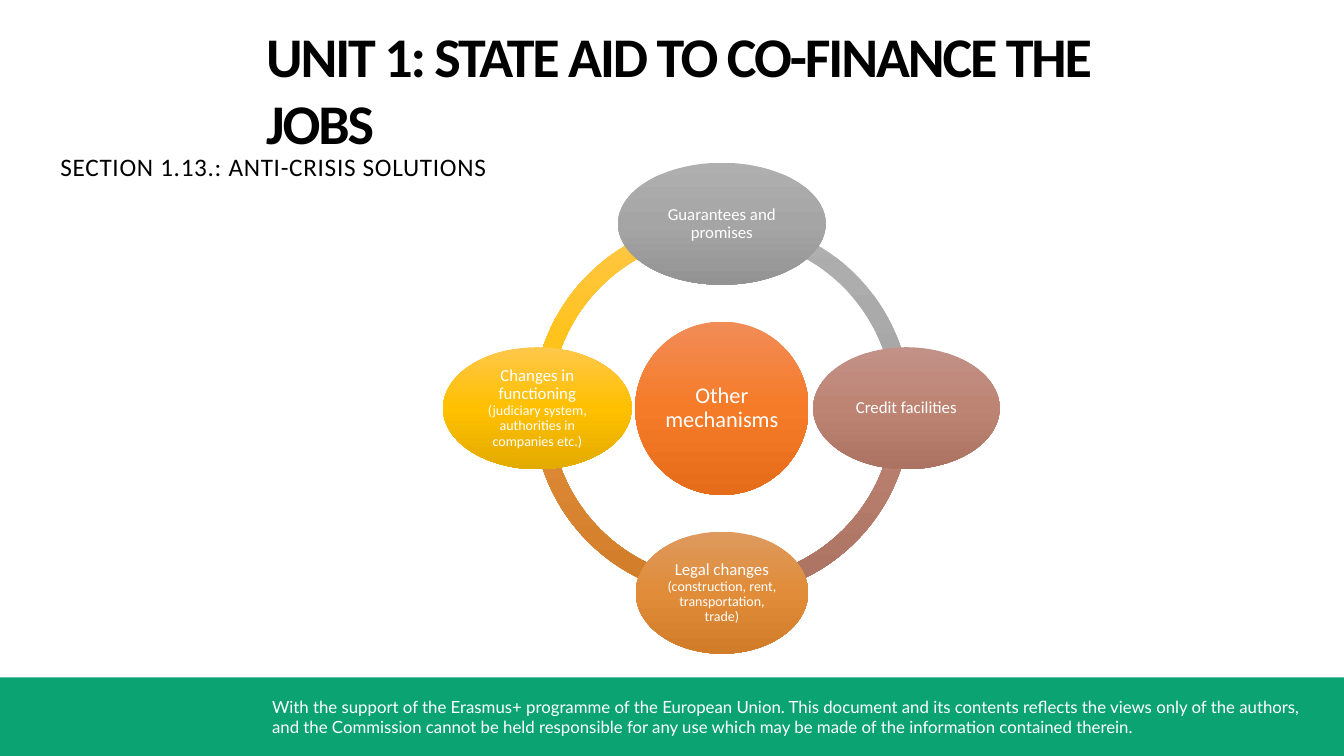
from copy import deepcopy

from pptx import Presentation
from pptx.dml.color import RGBColor
from pptx.enum.shapes import MSO_SHAPE
from pptx.enum.text import MSO_ANCHOR, PP_ALIGN
from pptx.oxml.ns import qn
from pptx.util import Inches, Pt

RECTANGLE, OVAL, ARC = MSO_SHAPE.RECTANGLE, MSO_SHAPE.OVAL, MSO_SHAPE.BLOCK_ARC
CENTER, MIDDLE, TOP = PP_ALIGN.CENTER, MSO_ANCHOR.MIDDLE, MSO_ANCHOR.TOP

# Content
TITLE = "UNIT 1: STATE AID TO CO-FINANCE THE JOBS"
SECTION = "SECTION 1.13.: ANTI-CRISIS SOLUTIONS"
SUPPORT = ("With the support of the Erasmus+ programme of the European Union. "
           "This document and its contents reflects the views only of the authors, "
           "and the Commission cannot be held responsible for any use which may be "
           "made of the information contained therein.")
HUB = "Other mechanisms"
# Clockwise from the top: label, detail, width, gradient, direction from the hub
NODES = [
    ("Guarantees and promises", "", 2.06, "gray", (0, -1)),
    ("Credit facilities", "", 1.85, "brown", (1, 0)),
    ("Legal changes ", "(construction, rent, transportation, trade)", 1.71, "amber", (0, 1)),
    ("Changes in functioning ", "(judiciary system, authorities in companies etc.)",
     1.87, "yellow", (-1, 0)),
]

COLORS = {"green": "0CA373", "white": "FFFFFF", "black": "000000"}
GRADIENTS = {
    "orange": ("F18C57", "F67B28", "E56C19"),
    "gray": ("AFAFAF", "A5A5A5", "939393"),
    "brown": ("C28787", "BE7373", "AD6262") and ("C29187", "BE8473", "AD7362"),
    "amber": ("DE9A5E", "E08C38", "D07C29"),
    "yellow": ("FFC74B", "FFC000", "E3AB00"),
}
GRADIENTS["brown"] = ("C29187", "BE8473", "AD7362")

# Geometry in inches
WIDTH, HEIGHT = 13.33, 7.5
BAND_TOP = 6.72
HUB_X, HUB_Y, HUB_SIZE = 7.16, 4.05, 1.72
ORBIT, NODE_HEIGHT = 1.83, 1.21
RING_SIZE, RING_THICKNESS = 3.75, 0.046
QUARTER = 54  # 90 degrees in block-arc adjustment units

deck = Presentation()
deck.slide_width, deck.slide_height = Inches(WIDTH), Inches(HEIGHT)
page = deck.slides.add_slide(deck.slide_layouts[6])


def add_span(para, text, size, color, font="Calibri", bold=False, spacing=0):
    span = para.add_run()
    span.text = text
    span.font.size, span.font.name, span.font.bold = Pt(size), font, bold
    span.font.color.rgb = RGBColor.from_string(COLORS[color])
    if spacing:
        span.font._element.set("spc", str(int(spacing * 100)))


def add_text(left, top, width, height, text, size, color, inset=(0.1, 0.05), **style):
    box = page.shapes.add_textbox(*map(Inches, (left, top, width, height)))
    frame = box.text_frame
    frame.word_wrap, frame.vertical_anchor = True, TOP
    frame.margin_left = frame.margin_right = Inches(inset[0])
    frame.margin_top = frame.margin_bottom = Inches(inset[1])
    add_span(frame.paragraphs[0], text, size, color, **style)


def add_plain(kind, left, top, width, height):
    shape = page.shapes.add_shape(kind, *map(Inches, (left, top, width, height)))
    shape.shadow.inherit = False
    shape.line.fill.background()
    return shape


def add_centered(kind, x, y, width, height, gradient):
    shape = add_plain(kind, x - width / 2, y - height / 2, width, height)
    shape.fill.gradient()
    shape.fill.gradient_angle = 270
    stop_list = shape._element.spPr.find(qn("a:gradFill")).find(qn("a:gsLst"))
    stop_list.append(deepcopy(stop_list[0]))
    for index, stop in enumerate(shape.fill.gradient_stops):
        stop.position = index / 2
        stop.color.rgb = RGBColor.from_string(GRADIENTS[gradient][index])
    return shape


def add_bubble(x, y, width, height, gradient, spans):
    frame = add_centered(OVAL, x, y, width, height, gradient).text_frame
    frame.word_wrap, frame.vertical_anchor = True, MIDDLE
    frame.margin_left = frame.margin_right = Inches(0.02)
    frame.margin_top = frame.margin_bottom = Inches(0.02)
    para = frame.paragraphs[0]
    para.alignment, para.line_spacing = CENTER, 0.9
    for text, size in spans:
        if text:
            add_span(para, text, size, "white")


# Footer band
band = add_plain(RECTANGLE, 0, BAND_TOP, WIDTH, HEIGHT - BAND_TOP)
band.fill.solid()
band.fill.fore_color.rgb = RGBColor.from_string(COLORS["green"])
add_text(2.6, 6.86, 10.42, 0.5, SUPPORT, 12, "white", font="Lato")

# Ring: one quarter clockwise from each node
for index, (_, _, _, gradient, _) in enumerate(NODES):
    arc = add_centered(ARC, HUB_X, HUB_Y, RING_SIZE, RING_SIZE, gradient)
    arc.adjustments[0] = (index + 3) % 4 * QUARTER
    arc.adjustments[1] = index * QUARTER
    arc.adjustments[2] = RING_THICKNESS

# Hub and nodes
add_bubble(HUB_X, HUB_Y, HUB_SIZE, HUB_SIZE, "orange", [(HUB, 16)])
for label, detail, width, gradient, (across, down) in NODES:
    add_bubble(HUB_X + across * ORBIT, HUB_Y + down * ORBIT, width, NODE_HEIGHT,
               gradient, [(label, 12), (detail, 10)])

# Headings
add_text(2.64, 0.2, 8.98, 0.69, TITLE, 40, "black", inset=(0, 0.01), bold=True, spacing=-1.5)
add_text(0.5, 1.45, 6.66, 0.4, SECTION, 18, "black", spacing=0.5)

deck.save("out.pptx")
